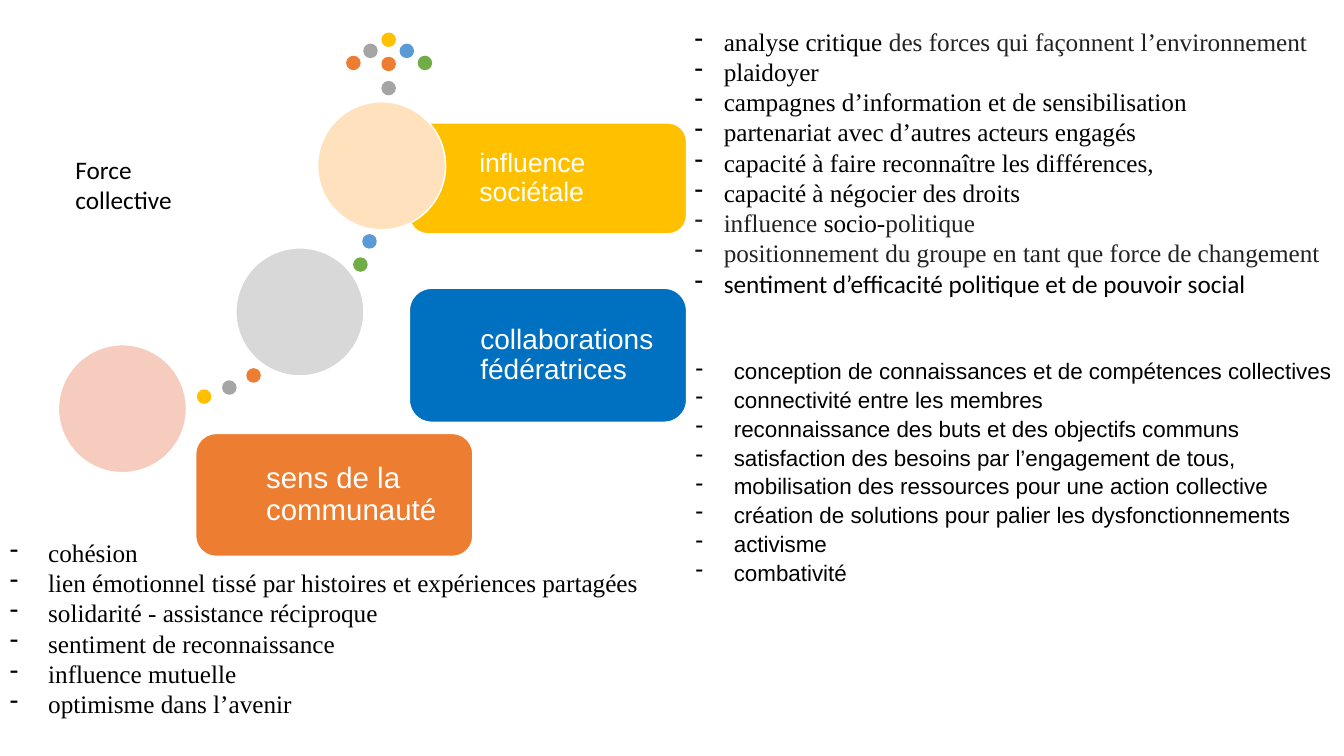
from itertools import cycle

from pptx import Presentation
from pptx.dml.color import RGBColor
from pptx.enum.shapes import MSO_SHAPE
from pptx.enum.text import MSO_ANCHOR, PP_ALIGN
from pptx.oxml.xmlchemy import OxmlElement
from pptx.util import Inches, Pt

ELLIPSE, ROUNDED = MSO_SHAPE.OVAL, MSO_SHAPE.ROUNDED_RECTANGLE
MIDDLE, LEFT, JUSTIFY = MSO_ANCHOR.MIDDLE, PP_ALIGN.LEFT, PP_ALIGN.JUSTIFY

BLACK = RGBColor(0x00, 0x00, 0x00)
CHARCOAL = RGBColor(0x22, 0x22, 0x22)
WHITE = RGBColor(0xFF, 0xFF, 0xFF)
ORANGE = RGBColor(0xED, 0x7D, 0x31)
GREY = RGBColor(0xA5, 0xA5, 0xA5)
GOLD = RGBColor(0xFF, 0xC0, 0x00)
SKY = RGBColor(0x5B, 0x9B, 0xD5)
GREEN = RGBColor(0x70, 0xAD, 0x47)
BLUE = RGBColor(0x00, 0x70, 0xC0)
ROSE = RGBColor(0xF6, 0xCC, 0xBE)
SILVER = RGBColor(0xD8, 0xD8, 0xD8)
CREAM = RGBColor(0xFF, 0xE2, 0xBD)

SERIF, SANS, BODY = "Times New Roman", "Arial", "Calibri"
DOT, CIRCLE, CARD_WIDTH = 0.13, 1.27, 2.75
DOT_COLOURS = (ORANGE, GREY, GOLD, SKY, GREEN)

# Offsets inside the staircase: links between the steps, then the arrow on top
DOTS = [(1.87, 3.33), (1.63, 3.45), (1.38, 3.54), (3.02, 2.0), (2.93, 2.23),
        (2.86, 0.23), (3.03, 0.11), (3.21, 0), (3.39, 0.11), (3.57, 0.23),
        (3.21, 0.24), (3.21, 0.48)]

# Card text, size, colour, left, top, height; circle colour, left, top
STEPS = [
    ("sens de la communauté", 21, ORANGE, 1.36, 3.97, 1.22, ROSE, 0, 3.09),
    ("collaborations fédératrices", 20, BLUE, 3.48, 2.53, 1.33, SILVER, 1.76, 2.13),
    ("influence sociétale", 19, GOLD, 3.48, 0.89, 1.1, CREAM, 2.57, 0.68),
]

COMMUNITY = [
    "cohésion",
    "lien émotionnel tissé par histoires et expériences partagées",
    "solidarité - assistance réciproque",
    "sentiment de reconnaissance",
    "influence mutuelle",
    "optimisme dans l’avenir",
]
COLLABORATION = [
    "conception de connaissances et de compétences collectives",
    "connectivité entre les membres",
    "reconnaissance des buts et des objectifs communs",
    "satisfaction des besoins par l’engagement de tous,",
    "mobilisation des ressources pour une action collective",
    "création de solutions pour palier les dysfonctionnements",
    "activisme",
    "combativité",
]
# An item made of several runs is a list of (text, format) pairs
INFLUENCE = [
    [("analyse critique ", {}),
     ("des forces qui façonnent l’environnement", {"color": CHARCOAL})],
    "plaidoyer",
    "campagnes d’information et de sensibilisation",
    "partenariat avec d’autres acteurs engagés",
    "capacité à faire reconnaître les différences,",
    "capacité à négocier des droits",
    [("influence ", {"color": CHARCOAL}), ("socio-", {}),
     ("politique", {"color": CHARCOAL})],
    [("positionnement du groupe en tant que force de changement",
      {"color": CHARCOAL})],
    [("sentiment d’efficacité politique et de pouvoir social", {"font": BODY})],
]


def add_run(p, text, size=18, font=BODY, color=BLACK):
    r = p.add_run()
    r.text = text
    r.font.size, r.font.name = Pt(size), font
    r.font.color.rgb = color


def add_filled(slide, kind, box, fill, line):
    s = slide.shapes.add_shape(kind, *map(Inches, box))
    s.shadow.inherit = False
    s.fill.solid()
    s.fill.fore_color.rgb = fill
    s.line.color.rgb = line
    s.line.width = Pt(1)
    return s


def add_text_box(slide, box):
    tf = slide.shapes.add_textbox(*map(Inches, box)).text_frame
    tf.word_wrap = True
    return tf


def dash_list(slide, box, items, margin=0.38, hanging=0.38, spacing=None, **fmt):
    tf = add_text_box(slide, box)
    for i, item in enumerate(items):
        p = tf.add_paragraph() if i else tf.paragraphs[0]
        p.alignment, p.line_spacing = JUSTIFY, spacing
        pPr = p._p.get_or_add_pPr()
        pPr.set("marL", str(Inches(margin)))
        pPr.set("indent", str(-Inches(hanging)))
        bullet = OxmlElement("a:buChar")
        bullet.set("char", "-")
        pPr.append(bullet)
        runs = [(item, {})] if isinstance(item, str) else item
        for text, extra in runs:
            add_run(p, text, **{**fmt, **extra})


def staircase(slide, left, top):
    # Dotted path
    for (x, y), colour in zip(DOTS, cycle(DOT_COLOURS)):
        add_filled(slide, ELLIPSE, (left + x, top + y, DOT, DOT), colour, colour)
    # Each step: card, then its circle in front
    for text, size, fill, x, y, height, tint, cx, cy in STEPS:
        card = add_filled(slide, ROUNDED, (left + x, top + y, CARD_WIDTH, height),
                          fill, WHITE)
        tf = card.text_frame
        tf.word_wrap, tf.vertical_anchor = True, MIDDLE
        tf.margin_left, tf.margin_right = Inches(0.64), Inches(0.15)
        p = tf.paragraphs[0]
        p.alignment, p.line_spacing = LEFT, 0.9
        add_run(p, text, size=size, font=SANS, color=WHITE)
        add_filled(slide, ELLIPSE, (left + cx, top + cy, CIRCLE, CIRCLE), tint, WHITE)


def main():
    prs = Presentation()
    prs.slide_width, prs.slide_height = Inches(13.33), Inches(7.5)
    slide = prs.slides.add_slide(prs.slide_layouts[6])

    # Details of each step
    dash_list(slide, (0, 5.28, 7.34, 2.22), COMMUNITY, font=SERIF)
    dash_list(slide, (6.8, 3.48, 7.02, 2.67), COLLABORATION, spacing=1.07,
              size=16, font=SANS)
    dash_list(slide, (6.64, 0.21, 6.7, 2.83), INFLUENCE, margin=0.44,
              hanging=0.29, font=SERIF)

    # Steps
    staircase(slide, 0.58, 0.33)

    # Heading
    tf = add_text_box(slide, (0.65, 1.48, 1.5, 0.71))
    add_run(tf.paragraphs[0], "Force collective")

    prs.save("out.pptx")


if __name__ == "__main__":
    main()
